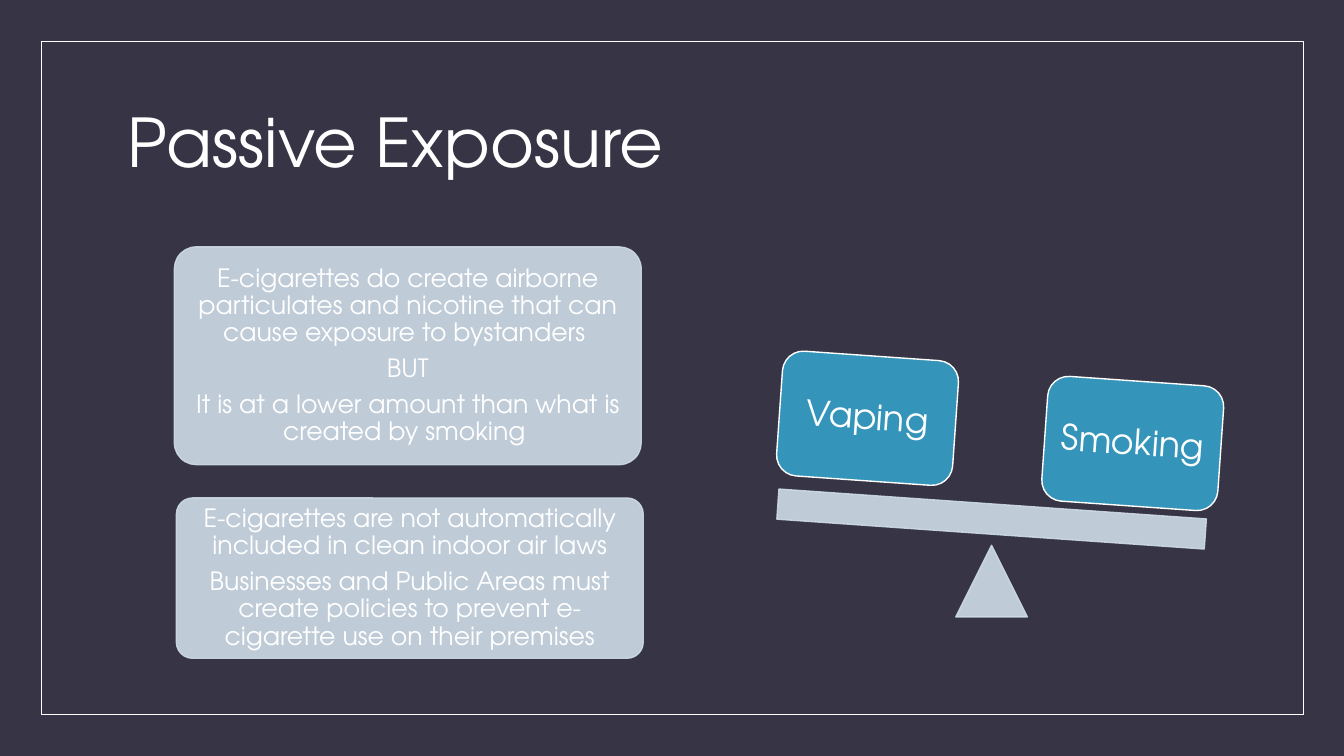
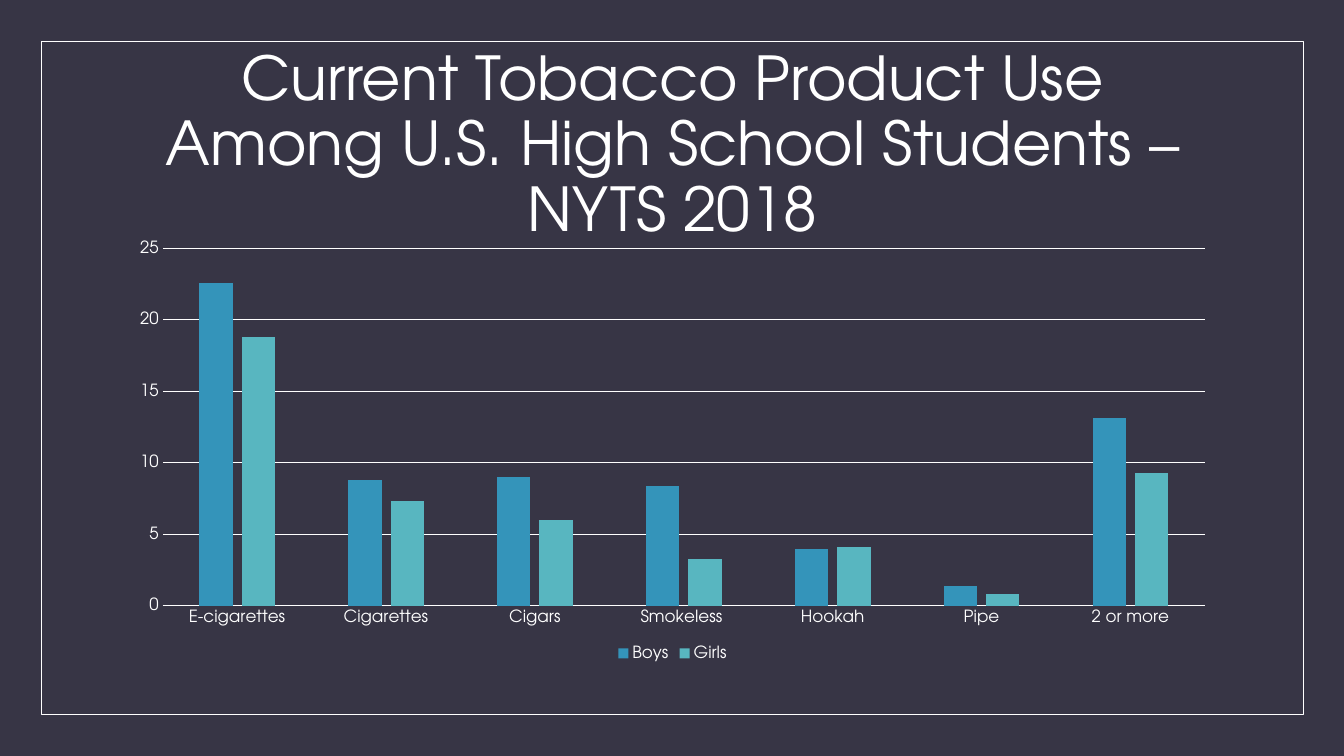
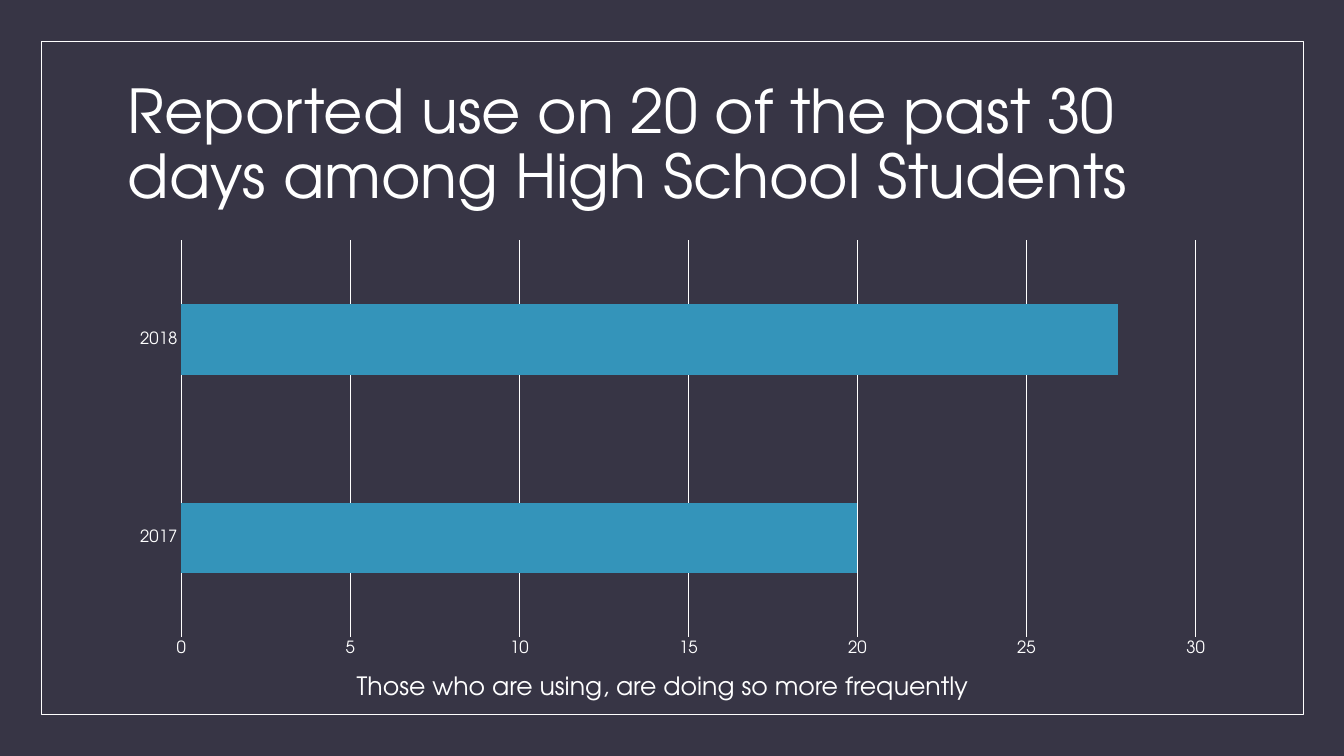
from dataclasses import dataclass

from lxml.etree import SubElement
from pptx import Presentation
from pptx.chart.data import CategoryChartData
from pptx.dml.color import RGBColor
from pptx.enum.chart import XL_CHART_TYPE, XL_LEGEND_POSITION, XL_TICK_MARK
from pptx.enum.shapes import MSO_SHAPE
from pptx.enum.text import MSO_ANCHOR, MSO_AUTO_SIZE, PP_ALIGN
from pptx.oxml.ns import qn
from pptx.util import Inches, Pt


@dataclass(frozen=True)
class Theme:
    font: str = "TeX Gyre Adventor"
    background: str = "373545"
    white: str = "FFFFFF"
    pale: str = "CEDCE7"
    blue: str = "3494BA"
    teal: str = "58B6C0"
    title: float = 48
    long_title: float = 43.2
    weight: float = 25
    body: float = 18
    axis: float = 12
    chart: float = 10


THEME = Theme()
CHART_AREA = (1.17, 2.3, 11, 4.3)
TILT = 4


# Formatting helpers
def rgb(color):
    return RGBColor.from_string(color)


def apply_format(target, values):
    for name, value in values.items():
        setattr(target, name, value)


def style_font(font, size):
    apply_format(font, {"name": THEME.font, "size": Pt(size)})
    font.color.rgb = rgb(THEME.white)


def style_line(line, width):
    line.color.rgb = rgb(THEME.white)
    line.width = Pt(width)


def set_opacity(shape, percent):
    for color in shape.element.spPr.iter(qn("a:srgbClr")):
        SubElement(color, qn("a:alpha"), val=str(percent * 1000))


def write_text(frame, paragraphs, size, align=PP_ALIGN.LEFT, spacing=0.9,
               after=0, anchor=MSO_ANCHOR.MIDDLE, inset=None):
    apply_format(frame, {"word_wrap": True, "vertical_anchor": anchor})
    if inset is not None:
        sides = ("left", "top", "right", "bottom")
        apply_format(frame, {f"margin_{side}": Inches(inset) for side in sides})
    for index, text in enumerate(paragraphs):
        para = frame.add_paragraph() if index else frame.paragraphs[0]
        apply_format(para, {"alignment": align, "line_spacing": spacing,
                            "space_after": Pt(after)})
        span = para.add_run()
        span.text = text
        style_font(span.font, size)


# Slide elements
def add_box(page, kind, area, fill=None, line=THEME.white, width=1, rotation=0):
    box = page.shapes.add_shape(kind, *map(Inches, area))
    box.shadow.inherit = False
    box.rotation = rotation
    if fill:
        box.fill.solid()
        box.fill.fore_color.rgb = rgb(fill)
    else:
        box.fill.background()
    box.line.color.rgb = rgb(line)
    box.line.width = Pt(width)
    return box


def add_pale_box(page, kind, area, rotation=0):
    box = add_box(page, kind, area, THEME.pale, THEME.pale, rotation=rotation)
    set_opacity(box, 90)
    return box


def add_text_box(page, area, text, size, **options):
    box = page.shapes.add_textbox(*map(Inches, area))
    write_text(box.text_frame, [text], size, **options)
    return box


def add_page(deck, title, size, align=PP_ALIGN.LEFT):
    page = deck.slides.add_slide(deck.slide_layouts[6])
    add_box(page, MSO_SHAPE.RECTANGLE, (0.41, 0.41, 12.52, 6.68), width=0.5)
    add_text_box(page, (1.17, 0.7, 11, 1.5), title, size, align=align)
    return page


def add_card(page, area, paragraphs):
    card = add_pale_box(page, MSO_SHAPE.ROUNDED_RECTANGLE, area)
    card.adjustments[0] = 0.1
    write_text(card.text_frame, paragraphs, THEME.body, PP_ALIGN.CENTER,
               after=0.35 * THEME.body, inset=0.07)


def add_weight(page, left, top, label):
    weight = add_box(page, MSO_SHAPE.ROUNDED_RECTANGLE, (left, top, 1.75, 1.24),
                     THEME.blue, rotation=TILT)
    write_text(weight.text_frame, [label], THEME.weight, PP_ALIGN.CENTER,
               after=0.35 * THEME.weight, inset=0.1)


def add_bar_chart(page, kind, categories, series, top_value, gap, overlap=0, legend=False):
    data = CategoryChartData()
    data.categories = categories
    for name, values, _ in series:
        data.add_series(name, values)
    chart = page.shapes.add_chart(kind, *map(Inches, CHART_AREA), data).chart
    style_font(chart.font, THEME.chart)
    apply_format(chart, {"has_title": False, "has_legend": legend})
    if legend:
        apply_format(chart.legend, {"position": XL_LEGEND_POSITION.BOTTOM,
                                    "include_in_layout": False})
        style_font(chart.legend.font, THEME.axis)

    # Bars
    plot = chart.plots[0]
    apply_format(plot, {"gap_width": gap, "overlap": overlap, "vary_by_categories": False})
    for bars, (_, _, color) in zip(plot.series, series):
        bars.format.fill.solid()
        bars.format.fill.fore_color.rgb = rgb(color)

    # Axes
    for axis in (chart.category_axis, chart.value_axis):
        apply_format(axis, {"major_tick_mark": XL_TICK_MARK.NONE,
                            "minor_tick_mark": XL_TICK_MARK.NONE})
        style_font(axis.tick_labels.font, THEME.axis)
    style_line(chart.category_axis.format.line, 0.75)
    scale = chart.value_axis
    apply_format(scale, {"minimum_scale": 0, "maximum_scale": top_value,
                         "major_unit": 5, "has_major_gridlines": True})
    scale.format.line.fill.background()
    style_line(scale.major_gridlines.format.line, 0.75)


# Slides
def build_exposure(deck):
    page = add_page(deck, "Passive Exposure", THEME.title)
    add_card(page, (1.75, 4.94, 4.63, 1.59), [
        "E-cigarettes are not automatically included in clean indoor air laws",
        "Businesses and Public Areas must create policies to prevent "
        "e-cigarette use on their premises",
    ])
    add_card(page, (1.73, 2.45, 4.63, 2.16), [
        "E-cigarettes do create airborne particulates and nicotine that can "
        "cause exposure to bystanders ",
        "BUT",
        "It is at a lower amount than what is created by smoking ",
    ])
    # Tilted balance
    add_pale_box(page, MSO_SHAPE.ISOSCELES_TRIANGLE, (9.48, 5.41, 0.71, 0.71))
    add_pale_box(page, MSO_SHAPE.RECTANGLE, (7.71, 5, 4.25, 0.3), TILT)
    add_weight(page, 10.36, 3.78, "Smoking")
    add_weight(page, 7.73, 3.53, "Vaping")


def build_product_use(deck):
    page = add_page(
        deck, "Current Tobacco Product Use Among U.S. High School Students – NYTS 2018",
        THEME.long_title, PP_ALIGN.CENTER)
    add_bar_chart(
        page, XL_CHART_TYPE.COLUMN_CLUSTERED,
        ["E-cigarettes", "Cigarettes", "Cigars", "Smokeless ", "Hookah", "Pipe", "2 or more"],
        [("Boys", (22.6, 8.8, 9, 8.4, 4, 1.4, 13.1), THEME.blue),
         ("Girls", (18.8, 7.3, 6, 3.3, 4.1, 0.8, 9.3), THEME.teal)],
        top_value=25, gap=219, overlap=-27, legend=True)


def build_frequent_use(deck):
    page = add_page(
        deck, "Reported use on 20 of the past 30 days among High School Students",
        THEME.long_title)
    add_bar_chart(page, XL_CHART_TYPE.BAR_CLUSTERED, ["2017", "2018"],
                  [("Series 1", (20, 27.7), THEME.blue)], top_value=30, gap=182)
    caption = add_text_box(page, (3.44, 6.6, 6.46, 0.4),
                           "Those who are using, are doing so more frequently",
                           THEME.body, spacing=1.0, anchor=MSO_ANCHOR.TOP)
    caption.text_frame.auto_size = MSO_AUTO_SIZE.SHAPE_TO_FIT_TEXT


def main():
    deck = Presentation()
    apply_format(deck, {"slide_width": Inches(13.33), "slide_height": Inches(7.5)})
    background = deck.slide_master.background.fill
    background.solid()
    background.fore_color.rgb = rgb(THEME.background)
    for build in (build_exposure, build_product_use, build_frequent_use):
        build(deck)
    deck.save("out.pptx")


if __name__ == "__main__":
    main()
